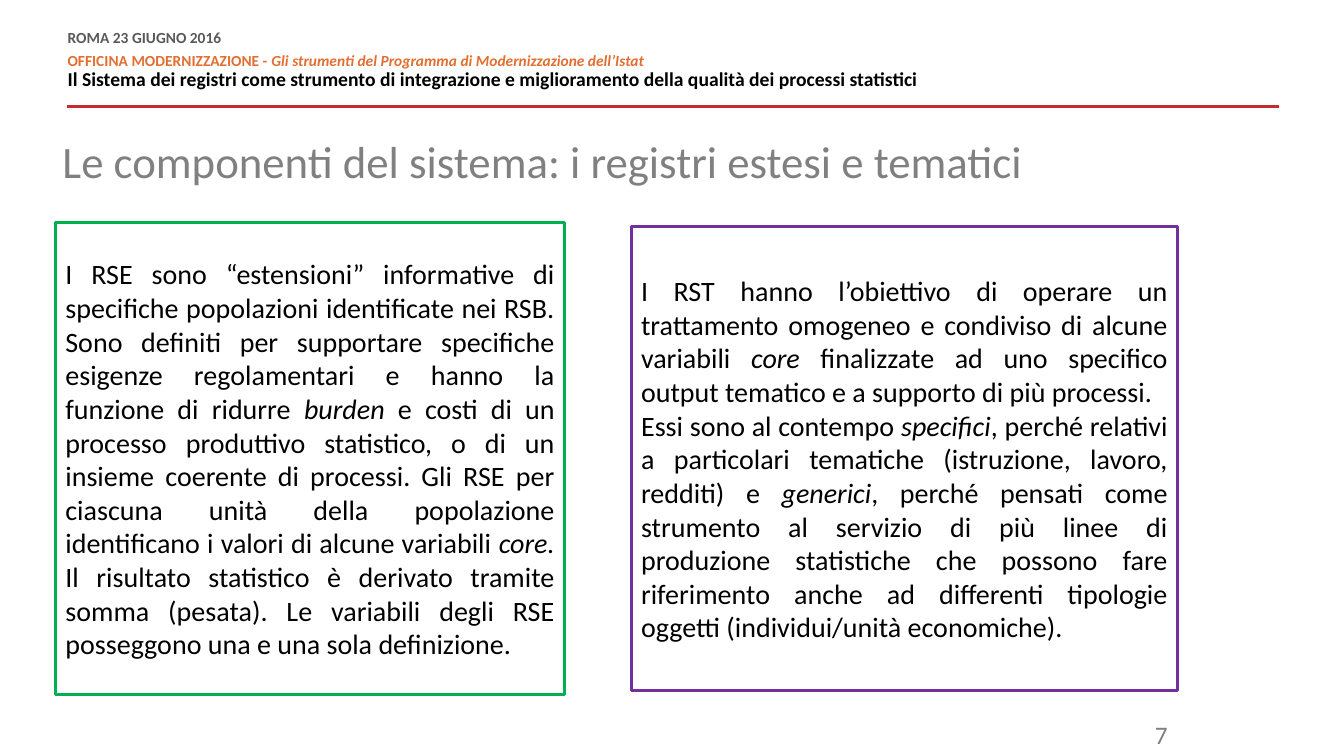
import pptx
import pptx.util
import pptx.oxml
import pptx.dml.color
import pptx.enum.shapes
import pptx.enum.text

Inches, Pt = pptx.util.Inches, pptx.util.Pt
ALIGN = pptx.enum.text.PP_ALIGN
ANCHOR = pptx.enum.text.MSO_ANCHOR
COLORS = {
    "white": "FFFFFF", "black": "000000", "dark grey": "595959",
    "title grey": "808080", "number grey": "7F7F7F", "orange": "E26F31",
    "red": "C72A31", "green": "00B050", "purple": "7030A0",
}


def rgb(name):
    return pptx.dml.color.RGBColor.from_string(COLORS[name])


def write(frame, runs, size, color="black", bold=False, align=ALIGN.LEFT,
          line=1.0, after=0, first=False):
    """Add one paragraph to the frame; every second run is italic."""
    para = frame.paragraphs[0] if first else frame.add_paragraph()
    para.alignment, para.line_spacing, para.space_after = align, line, Pt(after)
    for index, text in enumerate(runs):
        span = para.add_run()
        span.text = text
        span.font.name, span.font.size = "Calibri", Pt(size)
        span.font.bold, span.font.italic = bold, index % 2 == 1
        span.font.color.rgb = rgb(color)


deck = pptx.Presentation()
deck.slide_width, deck.slide_height = Inches(13.33), Inches(7.5)
page = deck.slides.add_slide(deck.slide_layouts[6])

# Header rule
rule = page.shapes.add_connector(
    pptx.enum.shapes.MSO_CONNECTOR.STRAIGHT,
    Inches(12.69), Inches(1.06), Inches(0.66), Inches(1.06))
rule.line.color.rgb, rule.line.width = rgb("red"), Pt(2)
rule._element.spPr.append(pptx.oxml.parse_xml(
    '<a:effectLst xmlns:a="http://schemas.openxmlformats.org/drawingml/2006/main"/>'))

# Header, title and page number
frames = {}
for name, place, inset in (
        ("header", (0.67, 0.31, 10.02, 0.6), False),
        ("title", (0.62, 1.39, 11.7, 0.81), False),
        ("number", (10.5, 7.09, 1.18, 0.35), True)):
    frame = page.shapes.add_textbox(*map(Inches, place)).text_frame
    frame.word_wrap = True
    if not inset:
        frame.margin_left = frame.margin_right = 0
        frame.margin_top = frame.margin_bottom = 0
    frames[name] = frame

write(frames["header"], ["ROMA 23 GIUGNO 2016"], 11, "dark grey", bold=True,
      line=Pt(10.8), after=6, first=True)
write(frames["header"],
      ["OFFICINA MODERNIZZAZIONE - ",
       "Gli strumenti del Programma di Modernizzazione dell’Istat"],
      11, "orange", bold=True, line=Pt(10.8))
write(frames["header"],
      ["Il Sistema dei registri come strumento di integrazione e "
       "miglioramento della qualità dei processi statistici"],
      14, bold=True, line=0.9)
write(frames["title"], ["Le componenti del sistema: i registri estesi e tematici"],
      32, "title grey", line=0.9, first=True)
write(frames["number"], ["7"], 18, "number grey", align=ALIGN.RIGHT, first=True)

# Framed descriptions of the two kinds of register
extended = [[
    "I RSE sono “estensioni” informative di specifiche popolazioni identificate "
    "nei RSB. Sono definiti per supportare specifiche esigenze regolamentari e "
    "hanno la funzione di ridurre ",
    "burden",
    " e costi di un processo produttivo statistico, o di un insieme coerente di "
    "processi. Gli RSE per ciascuna unità della popolazione identificano i valori "
    "di alcune variabili ",
    "core.",
    " Il risultato statistico è derivato tramite somma (pesata). Le variabili "
    "degli RSE posseggono una e una sola definizione.",
]]
thematic = [[
    "I RST hanno l’obiettivo di operare un trattamento omogeneo e condiviso di "
    "alcune variabili ",
    "core",
    " finalizzate ad uno specifico output tematico e a supporto di più processi.",
], [
    "Essi sono al contempo ",
    "specifici",
    ", perché relativi a particolari tematiche (istruzione, lavoro, redditi) e ",
    "generici",
    ", perché pensati come strumento al servizio di più linee di produzione "
    "statistiche che possono fare riferimento anche ad differenti tipologie "
    "oggetti (individui/unità economiche).",
]]
for place, color, paragraphs in (
        ((0.55, 2.21, 5.05, 4.68), "green", extended),
        ((6.26, 2.25, 5.42, 4.6), "purple", thematic)):
    box = page.shapes.add_shape(
        pptx.enum.shapes.MSO_SHAPE.RECTANGLE, *map(Inches, place))
    box.shadow.inherit = False
    box.fill.solid()
    box.fill.fore_color.rgb = rgb("white")
    box.line.color.rgb, box.line.width = rgb(color), Pt(2.25)
    box.text_frame.word_wrap = True
    box.text_frame.vertical_anchor = ANCHOR.MIDDLE
    for index, runs in enumerate(paragraphs):
        write(box.text_frame, runs, 20, align=ALIGN.JUSTIFY, first=index == 0)

deck.save("out.pptx")
